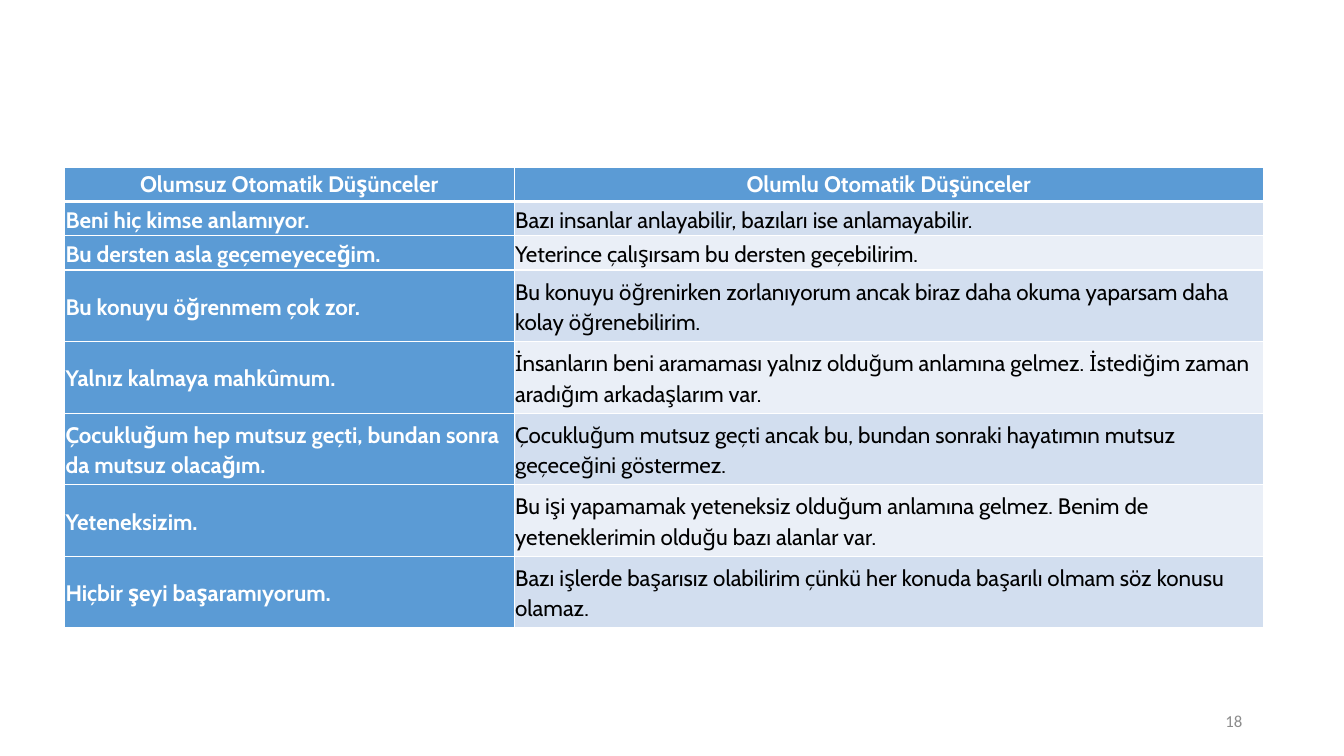
"""Build a slide that sets negative automatic thoughts beside positive ones."""
from dataclasses import dataclass

from lxml import etree
from pptx import Presentation
from pptx.dml.color import RGBColor
from pptx.enum.text import MSO_ANCHOR, PP_ALIGN
from pptx.oxml.ns import qn
from pptx.util import Emu, Pt

PX = 9144
LEFT, RIGHT, CENTER = PP_ALIGN.LEFT, PP_ALIGN.RIGHT, PP_ALIGN.CENTER
TOP, MIDDLE = MSO_ANCHOR.TOP, MSO_ANCHOR.MIDDLE
WHITE = RGBColor(0xFF, 0xFF, 0xFF)
BLACK = RGBColor(0x00, 0x00, 0x00)
GRAY = RGBColor(0x8C, 0x8C, 0x8C)
BLUE = RGBColor(0x5B, 0x9B, 0xD5)
BANDS = (RGBColor(0xD2, 0xDE, 0xEF), RGBColor(0xEA, 0xEF, 0xF7))
WIDTHS = (446, 743)
SHORT, TALL = 34, 71
THIN, THICK = 1, 3


@dataclass(frozen=True)
class Pair:
    """A negative thought, its positive answer and the row height in px."""
    bad: str
    good: str
    height: int


PAIRS = (
    Pair("Olumsuz Otomatik Düşünceler", "Olumlu Otomatik Düşünceler", SHORT),
    Pair("Beni hiç kimse anlamıyor.",
         "Bazı insanlar anlayabilir, bazıları ise anlamayabilir.", SHORT),
    Pair("Bu dersten asla geçemeyeceğim.",
         "Yeterince çalışırsam bu dersten geçebilirim.", SHORT),
    Pair("Bu konuyu öğrenmem çok zor.",
         "Bu konuyu öğrenirken zorlanıyorum ancak biraz daha okuma yaparsam "
         "daha kolay öğrenebilirim.", TALL),
    Pair("Yalnız kalmaya mahkûmum.",
         "İnsanların beni aramaması yalnız olduğum anlamına gelmez. "
         "İstediğim zaman aradığım arkadaşlarım var.", TALL),
    Pair("Çocukluğum hep mutsuz geçti, bundan sonra da mutsuz olacağım.",
         "Çocukluğum mutsuz geçti ancak bu, bundan sonraki hayatımın mutsuz "
         "geçeceğini göstermez.", TALL),
    Pair("Yeteneksizim.",
         "Bu işi yapamamak yeteneksiz olduğum anlamına gelmez. Benim de "
         "yeteneklerimin olduğu bazı alanlar var.", TALL),
    Pair("Hiçbir şeyi başaramıyorum.",
         "Bazı işlerde başarısız olabilirim çünkü her konuda başarılı olmam "
         "söz konusu olamaz.", TALL),
)


def px(count: int) -> Emu:
    """Turn px into EMU."""
    return Emu(count * PX)


def set_text(para, text: str, name: str, size: int, color: RGBColor,
             align: PP_ALIGN, bold: bool = False) -> None:
    """Write a paragraph in one style."""
    para.text = text
    para.alignment = align
    font = para.font
    font.name, font.size, font.bold = name, Pt(size), bold
    font.color.rgb = color


def set_edges(cell, row: int) -> None:
    """Draw white cell edges, thick under the header."""
    props = cell._tc.get_or_add_tcPr()
    top = THICK if row == 1 else THIN
    low = THICK if row == 0 else THIN
    for side, width in (("L", THIN), ("R", THIN), ("T", top), ("B", low)):
        line = etree.SubElement(props, qn(f"a:ln{side}"), w=str(Pt(width)))
        fill = etree.SubElement(line, qn("a:solidFill"))
        etree.SubElement(fill, qn("a:srgbClr"), val=str(WHITE))


def fill_cell(cell, text: str, row: int, col: int) -> None:
    """Style a cell by its place and write its text."""
    head = row == 0
    strong = head or col == 0
    set_edges(cell, row)
    cell.fill.solid()
    cell.fill.fore_color.rgb = BLUE if strong else BANDS[(row - 1) % 2]
    cell.margin_left = cell.margin_right = px(1)
    cell.margin_top = cell.margin_bottom = 0
    cell.vertical_anchor = TOP if head else MIDDLE
    para = cell.text_frame.paragraphs[0]
    set_text(para, text, "Cabin", 16, WHITE if strong else BLACK,
             CENTER if head else LEFT, strong)
    para.line_spacing = 1.12
    para.space_after = Pt(8)


def add_thoughts(slide) -> None:
    """Add the table of thoughts."""
    total = sum(pair.height for pair in PAIRS)
    table = slide.shapes.add_table(len(PAIRS), len(WIDTHS), px(64), px(166),
                                   px(sum(WIDTHS)), px(total)).table
    for column, width in zip(table.columns, WIDTHS):
        column.width = px(width)
    for row, pair in enumerate(PAIRS):
        table.rows[row].height = px(pair.height)
        for col, text in enumerate((pair.bad, pair.good)):
            fill_cell(table.cell(row, col), text, row, col)


def add_number(slide) -> None:
    """Add the slide number."""
    box = slide.shapes.add_textbox(px(942), px(695), px(300), px(40))
    frame = box.text_frame
    frame.word_wrap = True
    frame.vertical_anchor = MIDDLE
    set_text(frame.paragraphs[0], "18", "Calibri", 12, GRAY, RIGHT)


def main() -> None:
    """Build and save the slide."""
    deck = Presentation()
    deck.slide_width, deck.slide_height = px(1333), px(750)
    slide = deck.slides.add_slide(deck.slide_layouts[6])
    add_thoughts(slide)
    add_number(slide)
    deck.save("out.pptx")


if __name__ == "__main__":
    main()
